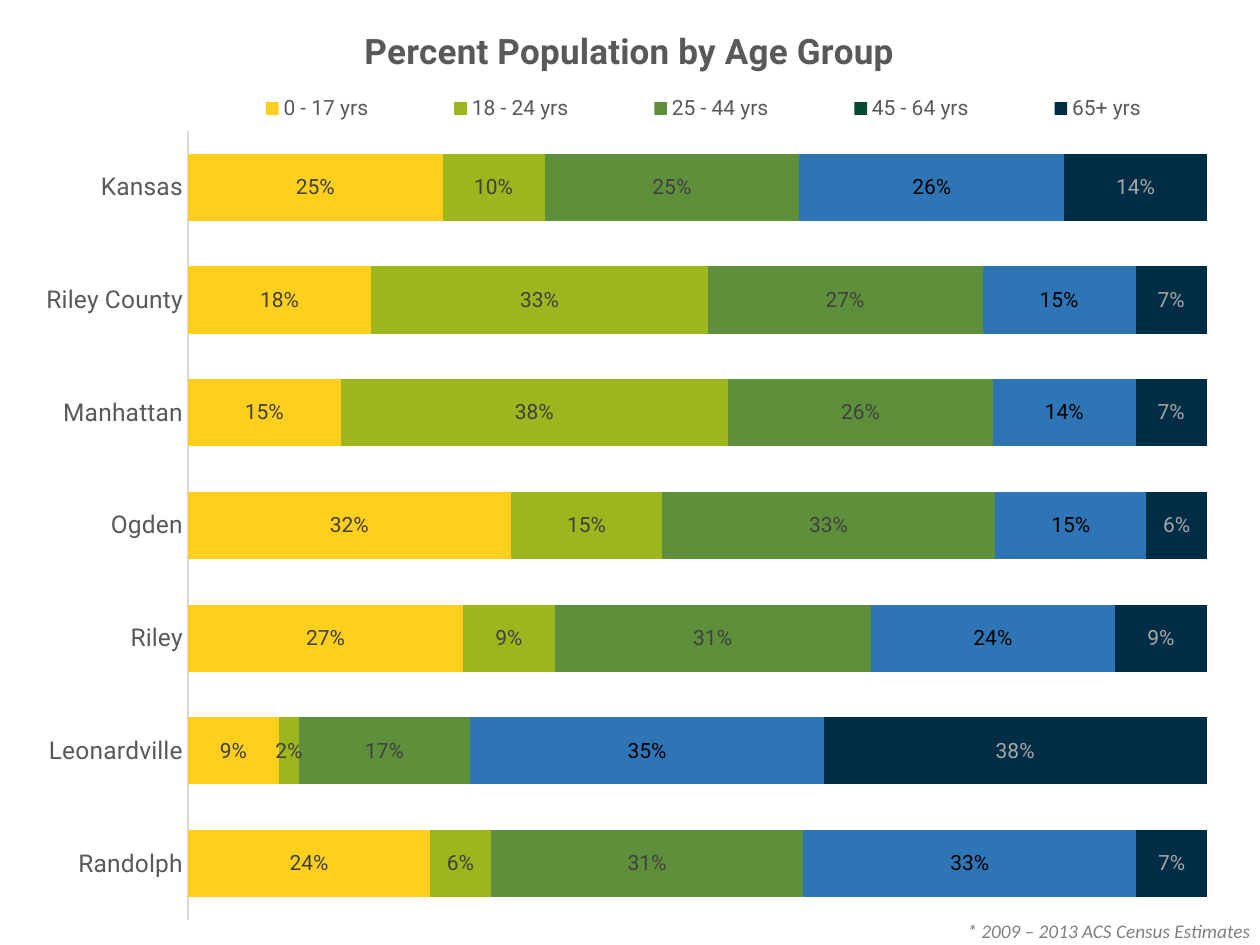
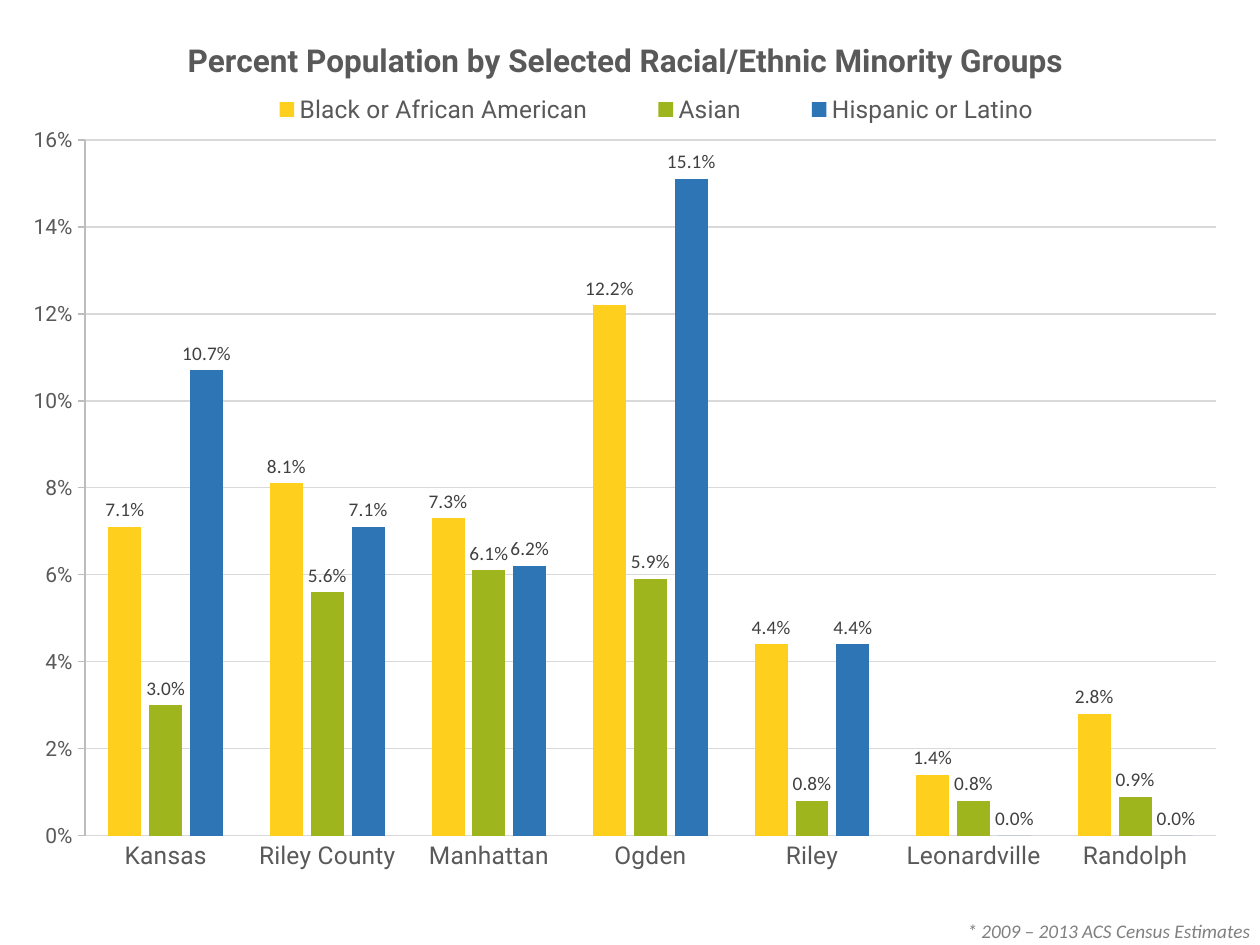
from lxml import etree
from pptx import Presentation
from pptx.chart.data import CategoryChartData
from pptx.dml.color import RGBColor
from pptx.enum.chart import (XL_CHART_TYPE as ChartType, XL_LABEL_POSITION as LabelPosition,
                             XL_LEGEND_POSITION as LegendPosition, XL_TICK_MARK as Tick)
from pptx.oxml import parse_xml
from pptx.oxml.ns import nsdecls, qn
from pptx.util import Emu, Pt

EMU_PER_PX = 914400 / 126
SLIDE_SIZE = (1260, 945)
HEADING, BODY = "Roboto", "Calibri"
GREY, DARK, SILVER, RULE = "595959", "404040", "A6A6A6", "D9D9D9"
YELLOW, LIME, GREEN, FOREST, BLUE, NAVY = "FFCF1D", "9FB51D", "5E903C", "044A32", "2E75B6", "002D46"

PLACES = ["Kansas", "Riley County", "Manhattan", "Ogden", "Riley", "Leonardville", "Randolph"]
NOTE = "* 2009 – 2013 ACS Census Estimates"
NOTE_BOX = (955, 913, 305, 32)

AGE = {
    "kind": ChartType.BAR_STACKED_100, "box": (0, 0, 1260, 945),
    "title": "Percent Population by Age Group", "title_size": 20, "title_at": (358, 21),
    "legend_size": 12, "legend_at": (187, 85, 1033, 47),
    "plot_at": (188, 131, 1019, 789), "gap": 68, "overlap": 100,
    "format": "0%", "label_font": (HEADING, 12), "label_position": LabelPosition.CENTER,
    "series": [
        ("0 - 17 yrs", YELLOW, DARK, (0.25, 0.18, 0.15, 0.32, 0.27, 0.09, 0.24)),
        ("18 - 24 yrs", LIME, DARK, (0.10, 0.33, 0.38, 0.15, 0.09, 0.02, 0.06)),
        ("25 - 44 yrs", GREEN, DARK, (0.25, 0.27, 0.26, 0.33, 0.31, 0.17, 0.31)),
        ("45 - 64 yrs", FOREST, "000000", (0.26, 0.15, 0.14, 0.15, 0.24, 0.35, 0.33)),
        ("65+ yrs", NAVY, SILVER, (0.14, 0.07, 0.07, 0.06, 0.09, 0.38, 0.07)),
    ],
}
MINORITY = {
    "kind": ChartType.COLUMN_CLUSTERED, "box": (-21, 10, 1292, 935),
    "title": "Percent Population by Selected Racial/Ethnic Minority Groups",
    "title_size": 18, "title_at": (182, 34),
    "legend_size": 14, "legend_at": (217, 86, 879, 47),
    "plot_at": (85, 140, 1131, 696), "gap": 142, "overlap": -24,
    "format": "0.0%", "label_font": (BODY, 11), "label_position": LabelPosition.OUTSIDE_END,
    "series": [
        ("Black or African American", YELLOW, DARK, (0.071, 0.081, 0.073, 0.122, 0.044, 0.014, 0.028)),
        ("Asian", LIME, DARK, (0.030, 0.056, 0.061, 0.059, 0.008, 0.008, 0.009)),
        ("Hispanic or Latino", BLUE, DARK, (0.107, 0.071, 0.062, 0.151, 0.044, 0, 0)),
    ],
}


def px(*lengths):
    return [Emu(round(length * EMU_PER_PX)) for length in lengths]


def rgb(color):
    return RGBColor.from_string(color)


def style(font, name, size, color, bold=False, italic=False):
    font.name, font.size, font.bold, font.italic = name, Pt(size), bold, italic
    font.color.rgb = rgb(color)


def draw_line(line, color):
    line.color.rgb = rgb(color)
    line.width = Pt(0.75)


def paint(part, color):
    part.format.fill.solid()
    part.format.fill.fore_color.rgb = rgb(color)


def place(parent, index, area, chart_box, inner=False):
    left, top, width, height = chart_box
    offsets, sizes = (left, top, 0, 0), (width, height, width, height)
    fractions = [(length - offset) / size for length, offset, size in zip(area, offsets, sizes)]
    for old in parent.findall(qn("c:layout")):
        parent.remove(old)
    layout = parse_xml(f"<c:layout {nsdecls('c')}><c:manualLayout/></c:layout>")
    settings = [("layoutTarget", "inner")] if inner else []
    settings += [("xMode", "edge"), ("yMode", "edge"), *zip("xywh", fractions)]
    for tag, value in settings:
        etree.SubElement(layout[0], qn(f"c:{tag}")).set("val", str(value))
    parent.insert(index, layout)


def add_chart(page, design):
    data = CategoryChartData(number_format=design["format"])
    data.categories = PLACES
    for name, color, label_color, values in design["series"]:
        data.add_series(name, values)
    chart = page.shapes.add_chart(design["kind"], *px(*design["box"]), data).chart
    style(chart.font, BODY, 10, "000000")

    chart.has_title = True
    frame = chart.chart_title.text_frame
    frame.text = design["title"]
    style(frame.paragraphs[0].runs[0].font, HEADING, design["title_size"], GREY, bold=True)
    chart.chart_title.include_in_layout = False

    chart.has_legend = True
    chart.legend.position = LegendPosition.TOP
    chart.legend.include_in_layout = False
    style(chart.legend.font, HEADING, design["legend_size"], GREY)

    space = chart._chartSpace
    place(space.xpath("c:chart/c:title")[0], 1, design["title_at"], design["box"])
    place(space.xpath("c:chart/c:legend")[0], 1, design["legend_at"], design["box"])
    place(space.xpath("c:chart/c:plotArea")[0], 0, design["plot_at"], design["box"], inner=True)
    space.find(qn("c:chart")).addnext(parse_xml(
        f"<c:spPr {nsdecls('c', 'a')}><a:noFill/><a:ln><a:noFill/></a:ln></c:spPr>"))

    axis = chart.category_axis
    axis.major_tick_mark = axis.minor_tick_mark = Tick.NONE
    axis.has_major_gridlines = False
    style(axis.tick_labels.font, HEADING, 14, GREY)
    draw_line(axis.format.line, RULE)

    plot = chart.plots[0]
    plot.gap_width, plot.overlap = design["gap"], design["overlap"]
    plot.vary_by_categories = False
    for series, (name, color, label_color, values) in zip(plot.series, design["series"]):
        paint(series, color)
        series.invert_if_negative = False
        labels = series.data_labels
        labels.show_value = True
        labels.number_format, labels.number_format_is_linked = design["format"], False
        labels.position = design["label_position"]
        style(labels.font, *design["label_font"], label_color)
    return chart


def add_note(page):
    frame = page.shapes.add_textbox(*px(*NOTE_BOX)).text_frame
    frame.word_wrap = False
    frame.margin_right = 0
    frame.text = NOTE
    style(frame.paragraphs[0].runs[0].font, BODY, 11, "808080", italic=True)


def build_age_page(page):
    chart = add_chart(page, AGE)
    chart.category_axis.reverse_order = True
    chart.value_axis.has_major_gridlines = False
    chart.value_axis.visible = False
    middle_aged = chart.plots[0].series[3]
    for index in range(len(PLACES)):
        paint(middle_aged.points[index], BLUE)
    add_note(page)


def build_minority_page(page):
    add_note(page)
    axis = add_chart(page, MINORITY).value_axis
    axis.minimum_scale, axis.maximum_scale, axis.major_unit = 0, 0.16, 0.02
    axis.major_tick_mark, axis.minor_tick_mark = Tick.OUTSIDE, Tick.NONE
    axis.tick_labels.number_format = "0%"
    axis.tick_labels.number_format_is_linked = False
    style(axis.tick_labels.font, HEADING, 12, GREY)
    draw_line(axis.format.line, "BDBDBD")
    axis.has_major_gridlines = True
    draw_line(axis.major_gridlines.format.line, RULE)


def main():
    deck = Presentation()
    deck.slide_width, deck.slide_height = px(*SLIDE_SIZE)
    for build_page in (build_age_page, build_minority_page):
        build_page(deck.slides.add_slide(deck.slide_layouts[6]))
    deck.save("out.pptx")


if __name__ == "__main__":
    main()
